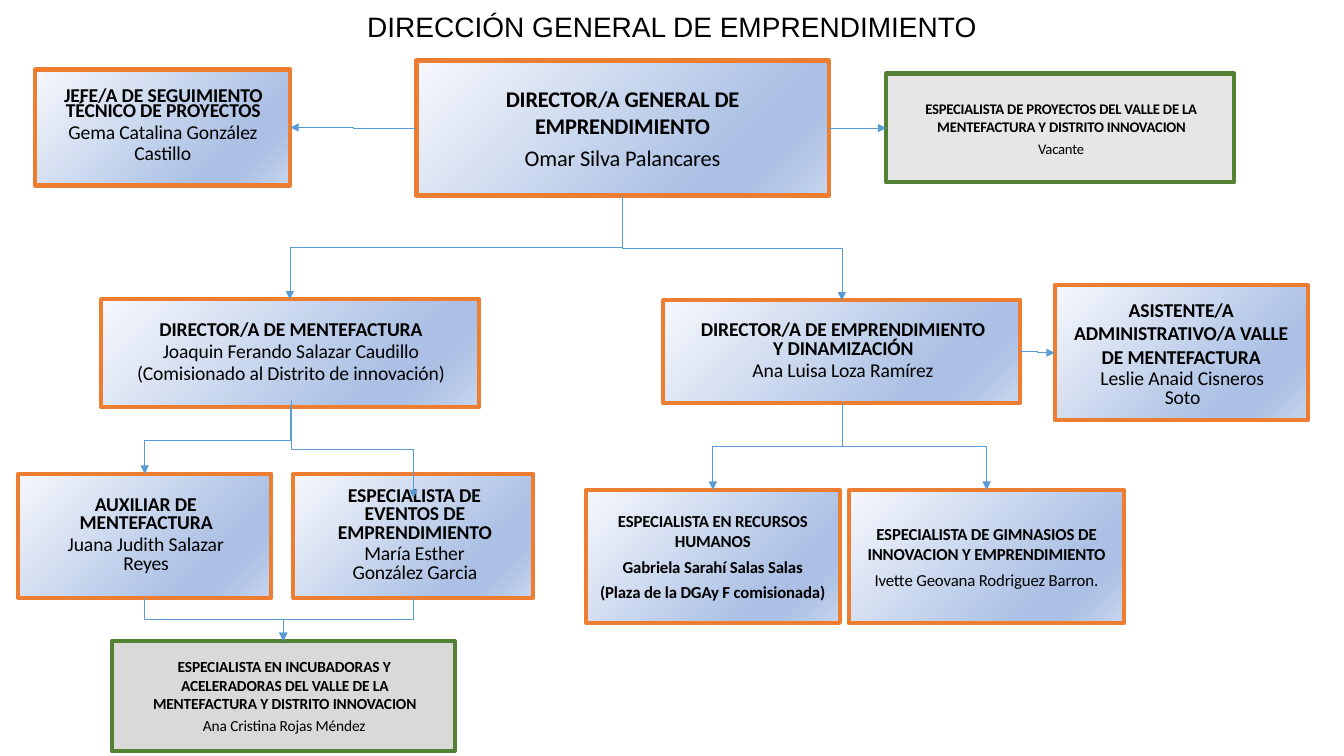
from lxml import etree
from pptx import Presentation
from pptx.dml.color import RGBColor
from pptx.enum.shapes import MSO_CONNECTOR, MSO_SHAPE
from pptx.enum.text import MSO_ANCHOR, PP_ALIGN
from pptx.oxml.ns import qn
from pptx.util import Inches, Pt

BLUE, ORANGE, GREEN = "5B9BD5", "ED7D31", "548235"
STOPS = [(0, "F6F8FC"), (74, "ABC0E4"), (83, "ABC0E4"), (100, "C7D5ED")]
BOTTOM, LEFT, RIGHT, TOP = 2, 1, 3, 0

# Paragraph styles: left margin, first-line indent, right margin, line spacing, space before
NARROW = (0.27, -0.01, 0.24, 13, 2.6)
LOOSE = (0, 0, 0, None, 4)
PLAIN = (0, 0, 0, None, 0)
LEAD = (0, 0, 0, None, 5.5)
TIGHT = (0.01, 0, 0, 10.8, 2.3)
OPEN = (0.11, 0, 0.11, 15, 0.8)

# name: (left, top, width, height), solid fill or None, size, [(text, bold, style)]
BOXES = {
    "general": ((4.13, 0.6, 4.09, 1.34), None, 16, [
        ("DIRECTOR/A GENERAL DE EMPRENDIMIENTO", True, LEAD),
        ("Omar Silva Palancares", False, LOOSE)]),
    "auxiliar": ((0.18, 4.7, 2.51, 1.23), None, 14, [
        ("AUXILIAR DE MENTEFACTURA", True, NARROW),
        ("Juana Judith Salazar Reyes", False, NARROW)]),
    "mentefactura": ((1, 2.97, 3.75, 1.07), None, 14, [
        ("DIRECTOR/A DE MENTEFACTURA", True, NARROW),
        ("Joaquin Ferando Salazar Caudillo", False, NARROW),
        ("(Comisionado al Distrito de innovación)", False, NARROW)]),
    "emprendimiento": ((6.58, 2.98, 3.54, 1.02), None, 14, [
        ("DIRECTOR/A DE EMPRENDIMIENTO Y DINAMIZACIÓN", True, NARROW),
        ("Ana Luisa Loza Ramírez", False, NARROW)]),
    "eventos": ((2.91, 4.7, 2.38, 1.23), None, 14, [
        ("ESPECIALISTA DE EVENTOS DE EMPRENDIMIENTO", True, NARROW),
        ("María Esther González Garcia", False, NARROW)]),
    "asistente": ((10.46, 2.83, 2.51, 1.34), None, 14, [
        ("ASISTENTE/A ADMINISTRATIVO/A VALLE DE MENTEFACTURA", True, PLAIN),
        ("Leslie Anaid Cisneros Soto", False, NARROW)]),
    "proyectos": ((8.79, 0.73, 3.45, 1.08), "E7E6E6", 10.5, [
        ("ESPECIALISTA DE PROYECTOS DEL VALLE DE LA MENTEFACTURA Y DISTRITO INNOVACION",
         True, NARROW),
        ("Vacante", False, NARROW)]),
    "seguimiento": ((0.35, 0.69, 2.53, 1.15), None, 14, [
        ("JEFE/A DE SEGUIMIENTO TÉCNICO DE PROYECTOS", True, TIGHT),
        ("Gema Catalina González Castillo", False, OPEN)]),
    "gimnasios": ((8.42, 4.86, 2.73, 1.32), None, 12, [
        ("ESPECIALISTA DE GIMNASIOS DE INNOVACION Y EMPRENDIMIENTO", True, LOOSE),
        ("Ivette Geovana Rodriguez Barron.", False, LOOSE)]),
    "incubadoras": ((1.11, 6.36, 3.4, 1.09), "D9D9D9", 11, [
        ("ESPECIALISTA EN INCUBADORAS Y ACELERADORAS DEL VALLE DE LA "
         "MENTEFACTURA Y DISTRITO INNOVACION", True, NARROW),
        ("Ana Cristina Rojas Méndez", False, NARROW)]),
    "humanos": ((5.81, 4.86, 2.52, 1.32), None, 12, [
        ("ESPECIALISTA EN RECURSOS HUMANOS", True, LOOSE),
        ("Gabriela Sarahí Salas Salas", True, LOOSE),
        ("(Plaza de la DGAy F comisionada)", True, LOOSE)]),
}
SIDEWAYS = [("general", LEFT, "seguimiento", RIGHT),
            ("general", RIGHT, "proyectos", LEFT),
            ("emprendimiento", RIGHT, "asistente", LEFT)]
DOWNWARD = [("general", "mentefactura"), ("general", "emprendimiento"),
            ("mentefactura", "auxiliar"), ("mentefactura", "eventos"),
            ("emprendimiento", "gimnasios"), ("emprendimiento", "humanos"),
            ("eventos", "incubadoras"), ("auxiliar", "incubadoras")]


def color(value):
    return RGBColor.from_string(value)


def add_arrow(x1, y1, x2, y2):
    c = s.shapes.add_connector(MSO_CONNECTOR.ELBOW, x1, y1, x2, y2)
    c.line.color.rgb = color(BLUE)
    c.line.width = Pt(0.5)
    etree.SubElement(c.line._get_or_add_ln(), qn("a:tailEnd"), type="triangle")
    etree.SubElement(c._element.spPr, qn("a:effectLst"))
    return c


prs = Presentation()
prs.slide_width, prs.slide_height = Inches(13.33), Inches(7.5)
s = prs.slides.add_slide(prs.slide_layouts[5])

# Title
title = s.shapes.title
title.left, title.top, title.width, title.height = map(Inches, (0, 0.04, 13.33, 0.44))
tf = title.text_frame
tf.text = "DIRECCIÓN GENERAL DE EMPRENDIMIENTO"
tf.vertical_anchor = MSO_ANCHOR.TOP
p = tf.paragraphs[0]
p.alignment = PP_ALIGN.CENTER
p.font.size, p.font.name, p.font.color.rgb = Pt(20), "Arial", color("000000")

# Position boxes
boxes = {}
for name, (place, solid, size, lines) in BOXES.items():
    sp = s.shapes.add_shape(MSO_SHAPE.RECTANGLE, *map(Inches, place))
    boxes[name] = sp
    sp.shadow.inherit = False
    sp.line.width = Pt(3)
    sp.line.color.rgb = color(GREEN if solid else ORANGE)
    if solid:
        sp.fill.solid()
        sp.fill.fore_color.rgb = color(solid)
    else:
        sp.fill.gradient()
        sp.fill.gradient_angle = 315
        stops = sp._element.spPr.find(".//" + qn("a:gsLst"))
        stops.clear()
        for pos, value in STOPS:
            gs = etree.SubElement(stops, qn("a:gs"), pos=str(pos * 1000))
            etree.SubElement(gs, qn("a:srgbClr"), val=value)
    tf = sp.text_frame
    tf.word_wrap = True
    tf.vertical_anchor = MSO_ANCHOR.MIDDLE
    for i, (text, bold, style) in enumerate(lines):
        margin, indent, right, spacing, before = style
        p = tf.add_paragraph() if i else tf.paragraphs[0]
        p.text = text
        p.alignment = PP_ALIGN.CENTER
        p.space_before = Pt(before)
        if spacing:
            p.line_spacing = Pt(spacing)
        p.font.size, p.font.name, p.font.bold = Pt(size), "Calibri", bold
        p.font.color.rgb = color("000000")
        pPr = p._p.get_or_add_pPr()
        for key, value in (("marL", margin), ("indent", indent), ("marR", right)):
            pPr.set(key, str(Inches(value)))
        pPr.get_or_add_defRPr().set("spc", "-10")

# Sideways arrows
for start, side, end, end_side in SIDEWAYS:
    c = add_arrow(0, 0, 0, 0)
    c.begin_connect(boxes[start], side)
    c.end_connect(boxes[end], end_side)

# Downward arrows: an elbow turned a quarter so that it leaves vertically
for start, end in DOWNWARD:
    a, b = boxes[start], boxes[end]
    x1, y1 = a.left + a.width // 2, a.top + a.height
    x2, y2 = b.left + b.width // 2, b.top
    loose = (start, end) == ("mentefactura", "eventos")
    if loose:
        x1, y1, y2 = Inches(2.89), Inches(3.97), Inches(4.94)
    c = add_arrow(x1, y1, x2, y2)
    if not loose:
        c.begin_connect(a, BOTTOM)
        c.end_connect(b, TOP)
    c.width, c.height = y2 - y1, abs(x2 - x1)
    c.left = (x1 + x2 - c.width) // 2
    c.top = (y1 + y2 - c.height) // 2
    xfrm = c._element.spPr.find(qn("a:xfrm"))
    xfrm.set("rot", str((90 if x2 < x1 else 270) * 60000))
    xfrm.set("flipH", "0" if x2 < x1 else "1")
    xfrm.set("flipV", "0")

prs.save("out.pptx")
